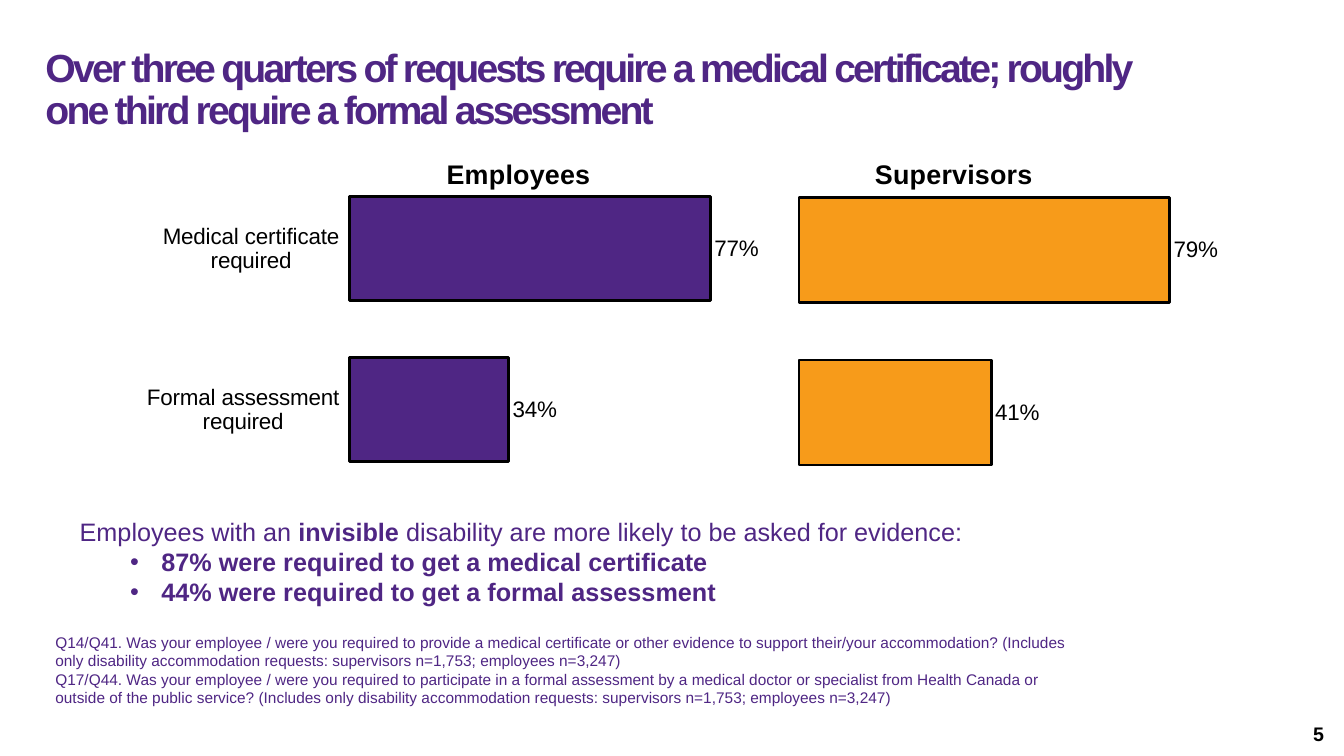
from lxml import etree
from pptx import Presentation, util as u
from pptx.chart.data import CategoryChartData
from pptx.dml.color import RGBColor
from pptx.enum import chart as ch, text
from pptx.oxml.ns import qn

COLORS = {"purple": "4F2684", "orange": "F79B1A", "black": "000000"}
FONT = "Arial"
WIDTH, HEIGHT = u.Inches(13.33), u.Inches(7.5)


def rgb(name):
    return RGBColor.from_string(COLORS[name])


def area(col, row, cols, rows):
    """Turn a place on a 100 by 100 grid into slide lengths."""
    return [int(n * side / 100) for n, side in
            ((col, WIDTH), (row, HEIGHT), (cols, WIDTH), (rows, HEIGHT))]


def place(sp, grid):
    sp.left, sp.top, sp.width, sp.height = area(*grid)


def style(font, size, color="black", bold=False):
    font.name, font.size, font.bold = FONT, u.Pt(size), bold
    font.color.rgb = rgb(color)


def add_runs(p, runs, size, color):
    """Add (wording, bold) pairs to a paragraph."""
    for wording, bold in runs:
        r = p.add_run()
        r.text = wording
        style(r.font, size, color, bold)


def set_bullet(p, char=None, left=0, hang=0):
    pPr = p._p.get_or_add_pPr()
    pPr.set("marL", str(u.Inches(left)))
    pPr.set("indent", str(-u.Inches(hang)))
    if char:
        etree.SubElement(pPr, qn("a:buFont")).set("typeface", FONT)
        etree.SubElement(pPr, qn("a:buChar")).set("char", char)
    else:
        etree.SubElement(pPr, qn("a:buNone"))


def set_title(s, grid, wording):
    sp = s.shapes.title
    place(sp, grid)
    tf = sp.text_frame
    tf.word_wrap, tf.auto_size = True, text.MSO_AUTO_SIZE.NONE
    tf.vertical_anchor = text.MSO_ANCHOR.TOP
    tf.margin_left = tf.margin_right = 0
    tf.margin_top = tf.margin_bottom = u.Inches(0.02)
    p = tf.paragraphs[0]
    p.alignment, p.line_spacing = text.PP_ALIGN.LEFT, 0.9
    add_runs(p, [(wording, True)], 28, "purple")
    p.runs[0].font._element.set("spc", "-200")


def set_list(sp, grid, lead, items):
    place(sp, grid)
    tf = sp.text_frame
    tf.word_wrap, tf.auto_size = True, text.MSO_AUTO_SIZE.NONE
    for i, runs in enumerate([lead] + items):
        p = tf.add_paragraph() if i else tf.paragraphs[0]
        p.space_before = u.Pt(0)
        if i:
            p.level = 1
            set_bullet(p, "•", 0.81, 0.31)
        else:
            set_bullet(p)
        add_runs(p, runs, 18, "purple")


def add_text(s, grid, lines, size, color, bold=False, align=text.PP_ALIGN.LEFT,
             anchor=text.MSO_ANCHOR.TOP):
    tf = s.shapes.add_textbox(*area(*grid)).text_frame
    tf.word_wrap, tf.vertical_anchor = True, anchor
    for i, line in enumerate(lines):
        p = tf.add_paragraph() if i else tf.paragraphs[0]
        p.alignment = align
        add_runs(p, [(line, bold)], size, color)


def set_layout(parent, index, **values):
    """Give a chart part a manual layout, in shares of the chart."""
    for old in parent.findall(qn("c:layout")):
        parent.remove(old)
    layout = etree.Element(qn("c:layout"))
    manual = etree.SubElement(layout, qn("c:manualLayout"))
    for tag, val in values.items():
        etree.SubElement(manual, qn("c:" + tag)).set("val", str(val))
    parent.insert(index, layout)


def add_bars(s, grid, heading, heading_x, plot_y, cats, vals, color, line, show_cats):
    data = CategoryChartData(number_format="0%")
    data.categories = cats
    data.add_series("Series 1", vals)
    chart = s.shapes.add_chart(ch.XL_CHART_TYPE.BAR_CLUSTERED, *area(*grid), data).chart
    style(chart.font, 16)
    chart.has_legend = False

    # Heading over the plot
    chart.has_title = True
    p = chart.chart_title.text_frame.paragraphs[0]
    add_runs(p, [(heading, True)], 19.2, "black")
    title = chart.chart_title._element
    set_layout(title, 1, xMode="edge", yMode="edge", x=heading_x, y=0.02)
    for old in title.findall(qn("c:overlay")):
        title.remove(old)
    overlay = etree.Element(qn("c:overlay"))
    overlay.set("val", "1")
    title.insert(2, overlay)

    # Axes
    val_axis, cat_axis = chart.value_axis, chart.category_axis
    val_axis.minimum_scale, val_axis.maximum_scale = 0, 1
    val_axis.has_major_gridlines = val_axis.visible = False
    cat_axis.reverse_order, cat_axis.visible = True, show_cats
    if show_cats:
        cat_axis.format.line.fill.background()
        style(cat_axis.tick_labels.font, 16)

    # Bars and value labels
    plot = chart.plots[0]
    plot.gap_width, plot.vary_by_categories = 55, False
    bars = plot.series[0].format
    bars.fill.solid()
    bars.fill.fore_color.rgb = rgb(color)
    bars.line.color.rgb, bars.line.width = rgb("black"), u.Pt(line)
    plot.has_data_labels = True
    labels = plot.data_labels
    labels.show_value = True
    labels.number_format, labels.number_format_is_linked = "0%", False
    labels.position = ch.XL_LABEL_POSITION.OUTSIDE_END
    style(labels.font, 16)
    set_layout(chart._chartSpace.chart.plotArea, 0, layoutTarget="inner",
               xMode="edge", yMode="edge", x=0.29, y=plot_y, w=0.66, h=1 - plot_y)


def main():
    prs = Presentation()
    prs.slide_width, prs.slide_height = WIDTH, HEIGHT
    s = prs.slides.add_slide(prs.slide_layouts[1])

    set_title(s, (3.38, 6.13, 85.45, 11.87),
              "Over three quarters of requests require a medical certificate; "
              "roughly one third require a formal assessment")

    # Charts for both groups
    add_bars(s, (10.65, 19.07, 52.89, 45.73), "Employees", 0.42, 0.07,
             ["Medical certificate required", "Formal assessment required"],
             [0.77, 0.34], "purple", 2.25, True)
    add_bars(s, (44.11, 19.07, 52.89, 46.27), "Supervisors", 0.39, 0.07,
             ["1", "2"], [0.79, 0.41], "orange", 2, False)

    # Key finding
    set_list(s.placeholders[1], (5.18, 67.6, 94.07, 13.47),
             [("Employees with an ", False), ("invisible", True),
              (" disability are more likely to be asked for evidence:", False)],
             [[("87% were required to get a medical certificate", True)],
              [("44% were required to get a formal assessment", True)]])

    # Survey questions and page number
    base = ("(Includes only disability accommodation requests: "
            "supervisors n=1,753; employees n=3,247)")
    add_text(s, (3.38, 83.07, 78.39, 11.2), [
        "Q14/Q41. Was your employee / were you required to provide a medical certificate "
        "or other evidence to support their/your accommodation? " + base,
        "Q17/Q44. Was your employee / were you required to participate in a formal "
        "assessment by a medical doctor or specialist from Health Canada or outside of "
        "the public service? " + base], 11, "purple")
    add_text(s, (76.74, 94.4, 22.51, 5.33), ["5"], 14, "black", True,
             text.PP_ALIGN.RIGHT, text.MSO_ANCHOR.MIDDLE)

    prs.save("out.pptx")


if __name__ == "__main__":
    main()
